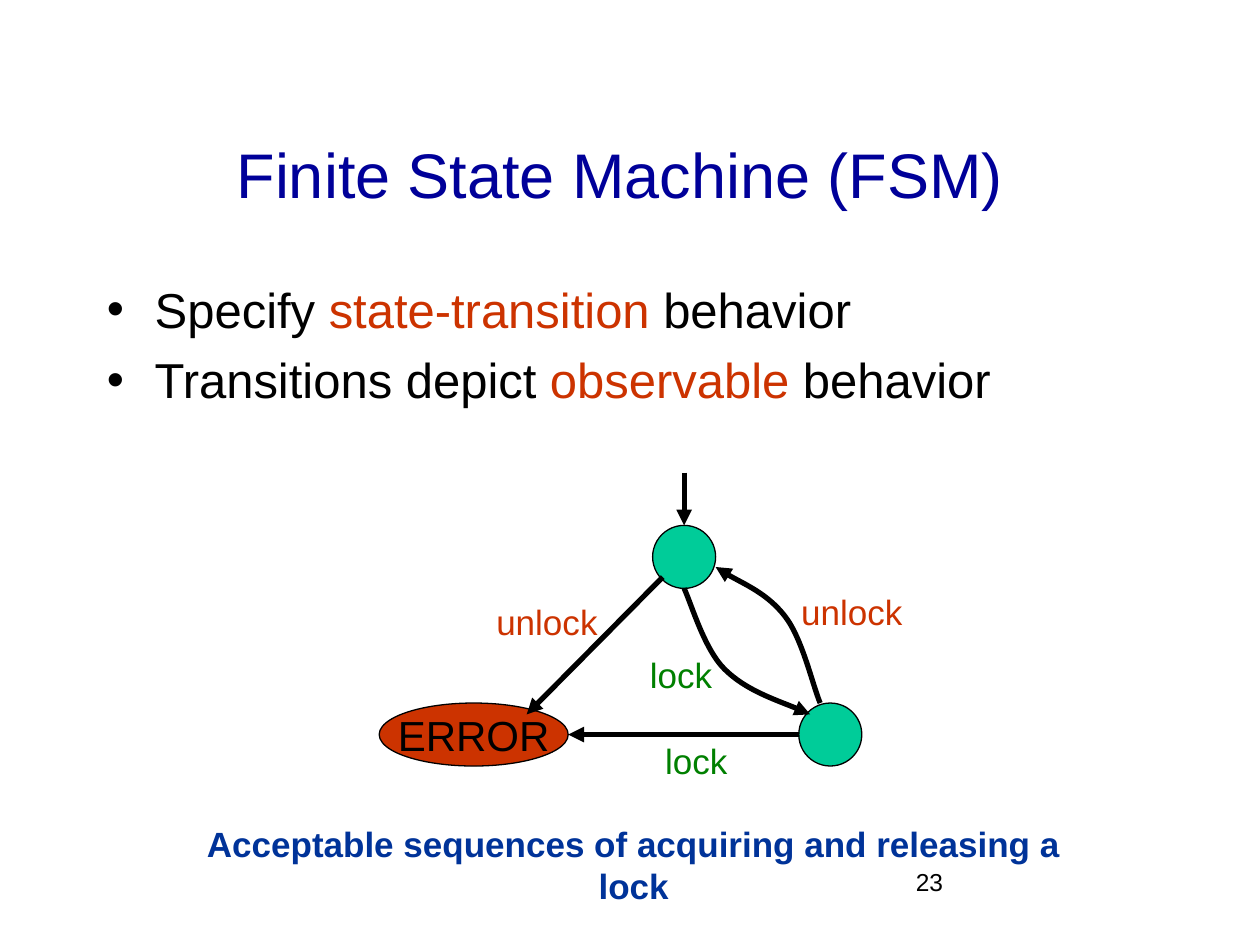
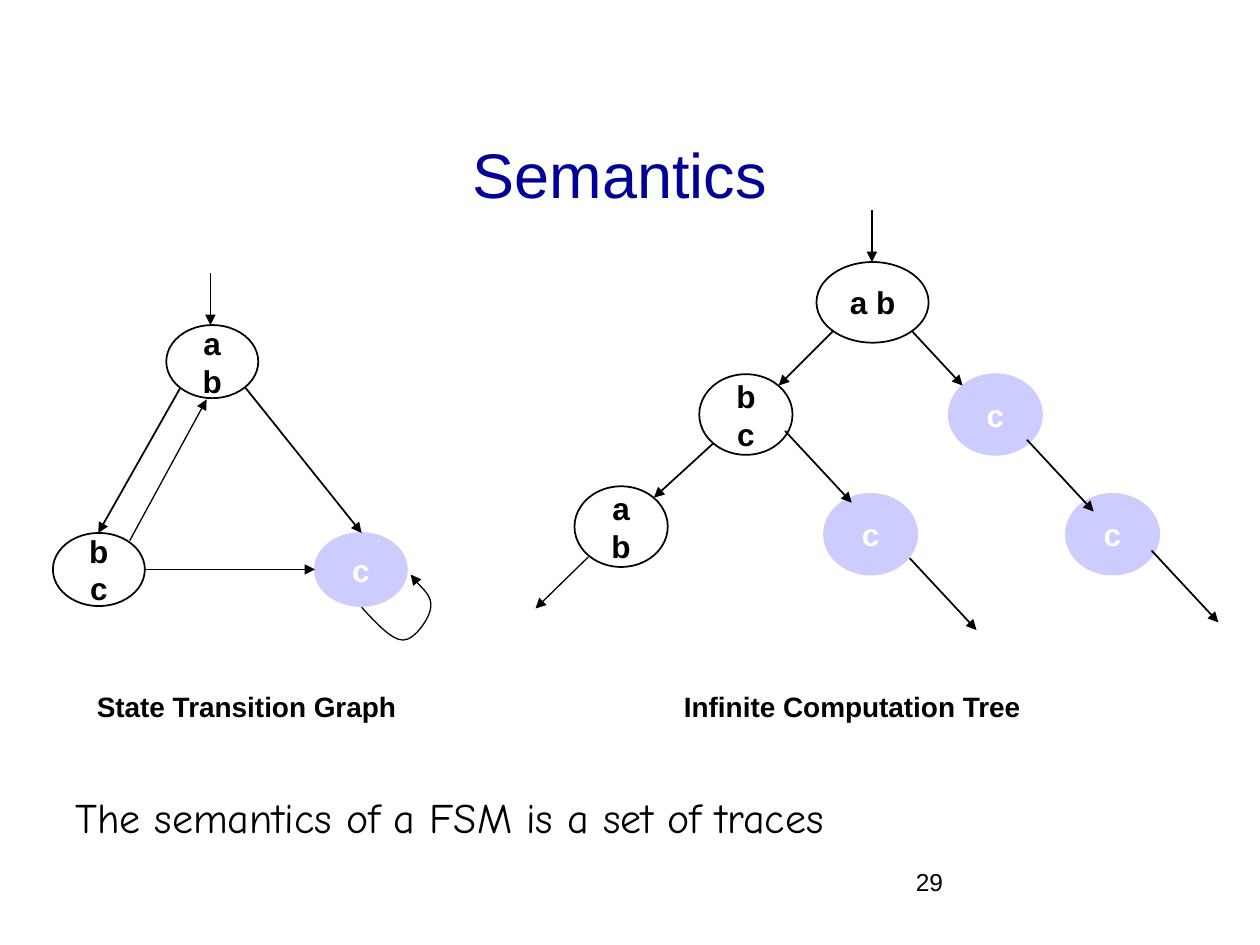
from dataclasses import dataclass
from lxml.etree import SubElement
from pptx import Presentation
from pptx.dml.color import RGBColor
from pptx.enum.shapes import MSO_CONNECTOR, MSO_SHAPE
from pptx.enum.text import MSO_ANCHOR, MSO_AUTO_SIZE, PP_ALIGN
from pptx.oxml.ns import qn
from pptx.util import Inches, Pt


@dataclass(frozen=True)
class Theme:
    font: str = "Arial"
    hand: str = "Comic Neue"
    ink: str = "000000"
    white: str = "FFFFFF"
    navy: str = "000099"
    blue: str = "003399"
    red: str = "CC3300"
    green: str = "008000"
    mint: str = "00CC99"
    lilac: str = "CCCCFF"
    title: int = 36
    body: int = 28
    large: int = 24
    label: int = 20
    node: int = 18
    caption: int = 16
    number: int = 14
    thin: float = 0.75
    line: float = 1
    thick: float = 3


THEME = Theme()


def style(font, size, color=THEME.ink, bold=False, name=THEME.font):
    font.name, font.size, font.bold = name, Pt(size), bold
    font.color.rgb = RGBColor.from_string(color)


def arrow(shape, width):
    """Draw the shape's line in ink, without shadow, with a head at its end."""
    shape.line.color.rgb = RGBColor.from_string(THEME.ink)
    shape.line.width = Pt(width)
    props = shape.element.spPr
    SubElement(props.find(qn("a:ln")), qn("a:tailEnd"), type="triangle")
    if props.find(qn("a:effectLst")) is None:
        SubElement(props, qn("a:effectLst"))


@dataclass
class Region:
    """A part of a slide; all places in it count from its left and top."""
    slide: object
    left: float
    top: float

    def spot(self, x, y):
        return Inches(self.left + x), Inches(self.top + y)

    def note(self, text, x, y, w, h, size, color=THEME.ink, bold=False,
             name=THEME.font, align=PP_ALIGN.LEFT, wrap=True):
        box = self.slide.shapes.add_textbox(*self.spot(x, y), Inches(w), Inches(h))
        frame = box.text_frame
        frame.word_wrap = wrap
        frame.text = text
        para = frame.paragraphs[0]
        para.alignment = align
        style(para.runs[0].font, size, color, bold, name)

    def oval(self, x, y, w, h, fill=None, edge=THEME.ink, width=THEME.line):
        shape = self.slide.shapes.add_shape(
            MSO_SHAPE.OVAL, *self.spot(x, y), Inches(w), Inches(h))
        shape.shadow.inherit = False
        if fill:
            shape.fill.solid()
            shape.fill.fore_color.rgb = RGBColor.from_string(fill)
        else:
            shape.fill.background()
        shape.line.color.rgb = RGBColor.from_string(edge)
        shape.line.width = Pt(width)
        return shape

    def state(self, text, x, y, w, h):
        """Add a labelled state; the state c is filled."""
        final = text == "c"
        fill, edge = (THEME.lilac, THEME.lilac) if final else (None, THEME.ink)
        shape = self.oval(x, y, w, h, fill, edge)
        write(shape, text, THEME.node, THEME.white if final else THEME.ink, True)

    def link(self, x1, y1, x2, y2, width=THEME.line):
        arrow(self.slide.shapes.add_connector(
            MSO_CONNECTOR.STRAIGHT, *self.spot(x1, y1), *self.spot(x2, y2)), width)

    def curve(self, points, width):
        """Draw Bezier arcs: a start point, then three points for each arc."""
        start, *rest = [self.spot(*point) for point in points]
        pen = self.slide.shapes.build_freeform(*start)
        pen.add_line_segments(rest, close=False)
        shape = pen.convert_to_shape()
        steps = list(shape.element.iter(qn("a:lnTo")))
        for i in range(0, len(steps), 3):
            arc = SubElement(steps[i].getparent(), qn("a:cubicBezTo"))
            for step in steps[i:i + 3]:
                arc.append(step[0])
                step.getparent().remove(step)
        shape.fill.background()
        shape.shadow.inherit = False
        arrow(shape, width)


def write(shape, text, size, color=THEME.ink, bold=False):
    frame = shape.text_frame
    frame.text = text
    frame.vertical_anchor = MSO_ANCHOR.MIDDLE
    para = frame.paragraphs[0]
    para.alignment = PP_ALIGN.CENTER
    style(para.runs[0].font, size, color, bold)


def page(deck, title, number):
    """Add a slide with its title and page number."""
    slide = deck.slides.add_slide(deck.slide_layouts[5])
    head = slide.shapes.title
    head.left, head.top = Inches(0.67), Inches(0.75)
    head.width, head.height = Inches(8.5), Inches(1.25)
    write(head, title, THEME.title, THEME.navy)
    head.text_frame.auto_size = MSO_AUTO_SIZE.NONE
    Region(slide, 7.17, 6.83).note(number, 0, 0, 2.08, 0.5, THEME.number)
    return slide


def bullets(slide, left, top, items):
    """List items, each a row of text pieces whose second piece is red."""
    box = slide.shapes.add_textbox(
        Inches(left), Inches(top), Inches(8.5), Inches(1.25))
    frame = box.text_frame
    frame.word_wrap = True
    for i, item in enumerate(items):
        para = frame.add_paragraph() if i else frame.paragraphs[0]
        props = para._p.get_or_add_pPr()
        props.set("marL", str(Inches(0.38)))
        props.set("indent", str(-Inches(0.38)))
        SubElement(props, qn("a:buFont"), typeface=THEME.font)
        SubElement(props, qn("a:buChar"), char="•")
        if i:
            para.space_before = Pt(6.5)
        for j, piece in enumerate(item):
            run = para.add_run()
            run.text = piece
            style(run.font, THEME.body, THEME.red if j == 1 else THEME.ink)


def machine(slide, left, top):
    area = Region(slide, left, top)
    for x, y in ((2.17, 0.42), (3.33, 1.83)):
        area.oval(x, y, 0.5, 0.5, THEME.mint, width=THEME.thin)
    error = area.oval(0, 1.83, 1.5, 0.5, THEME.red, width=THEME.thin)
    write(error, "ERROR", THEME.large)
    error.text_frame.word_wrap = False
    for ends in ((2.25, 0.83, 1.17, 1.92), (3.33, 2.08, 1.5, 2.08),
                 (2.42, 0, 2.42, 0.42)):
        area.link(*ends, THEME.thick)
    area.curve([(3.5, 1.83), (3.44, 1.69), (3.36, 1.32), (3.22, 1.14),
                (3.08, 0.96), (2.76, 0.82), (2.67, 0.75)], THEME.thick)
    area.curve([(2.42, 0.92), (2.48, 1.05), (2.58, 1.4), (2.74, 1.56),
                (2.91, 1.73), (3.3, 1.86), (3.42, 1.92)], THEME.thick)
    for text, color, w, spots in (
            ("unlock", THEME.red, 1.01, ((0.83, 0.97), (3.25, 0.89))),
            ("lock", THEME.green, 0.7, ((2.05, 1.39), (2.17, 2.07)))):
        for x, y in spots:
            area.note(text, x, y, w, 0.43, THEME.label, color, wrap=False)


def graph(slide, left, top):
    area = Region(slide, left, top)
    for text, x, y in (("a b", 0.9, 0.41), ("b c", 0, 2.06), ("c", 2.08, 2.06)):
        area.state(text, x, y, 0.73, 0.58)
    for ends in ((1.01, 0.91, 0.36, 2.06), (0.73, 2.35, 2.08, 2.35),
                 (1.53, 0.91, 2.45, 2.06)):
        area.link(*ends)
    for ends in ((0.61, 2.12, 1.22, 1), (1.25, 0, 1.25, 0.41)):
        area.link(*ends, THEME.thin)
    area.curve([(2.45, 2.65), (2.57, 2.78), (2.69, 2.91), (2.78, 2.91),
                (2.87, 2.91), (2.99, 2.74), (3, 2.65),
                (3.01, 2.56), (2.86, 2.43), (2.84, 2.39)], THEME.thin)
    area.note("State Transition Graph", 0.25, 3.25, 4.5, 0.37,
              THEME.caption, bold=True)


def tree(slide, left, top):
    area = Region(slide, left, top)
    area.state("a b", 2.23, 0.41, 0.89, 0.64)
    for text, x, y in (("b c", 1.3, 1.3), ("c", 3.28, 1.3), ("a b", 0.31, 2.19),
                       ("c", 2.29, 2.25), ("c", 4.21, 2.25)):
        area.state(text, x, y, 0.74, 0.64)
    for ends in ((2.36, 0.96, 1.93, 1.39), (2.99, 0.96, 3.39, 1.39),
                 (1.41, 1.85, 0.94, 2.28)):
        area.link(*ends)
    for x, y in ((1.98, 1.75), (3.9, 1.82), (4.89, 2.7), (2.97, 2.76)):
        area.link(x, y, x + 0.53, y + 0.57)
    for ends in ((0.42, 2.75, 0, 3.16), (2.67, 0, 2.67, 0.41)):
        area.link(*ends, THEME.thin)
    area.note("Infinite Computation Tree", 1.08, 3.75, 4.42, 0.37,
              THEME.caption, bold=True)


def main():
    deck = Presentation()
    deck.slide_width, deck.slide_height = Inches(10), Inches(7.5)

    slide = page(deck, "Finite State Machine (FSM)", "23")
    bullets(slide, 0.75, 2.17, (
        ("Specify ", "state-transition", " behavior"),
        ("Transitions depict ", "observable", " behavior")))
    machine(slide, 3.01, 3.75)
    Region(slide, 1.28, 6.48).note(
        "Acceptable sequences of acquiring and releasing a lock", 0, 0, 7.5, 0.77,
        THEME.label, THEME.blue, True, align=PP_ALIGN.CENTER)

    slide = page(deck, "Semantics", "29")
    graph(slide, 0.42, 2.17)
    tree(slide, 4.25, 1.67)
    Region(slide, 0.5, 6.23).note(
        "The semantics of a FSM is a set of traces", 0, 0, 9.23, 0.5,
        THEME.large, name=THEME.hand)
    deck.save("out.pptx")


if __name__ == "__main__":
    main()
